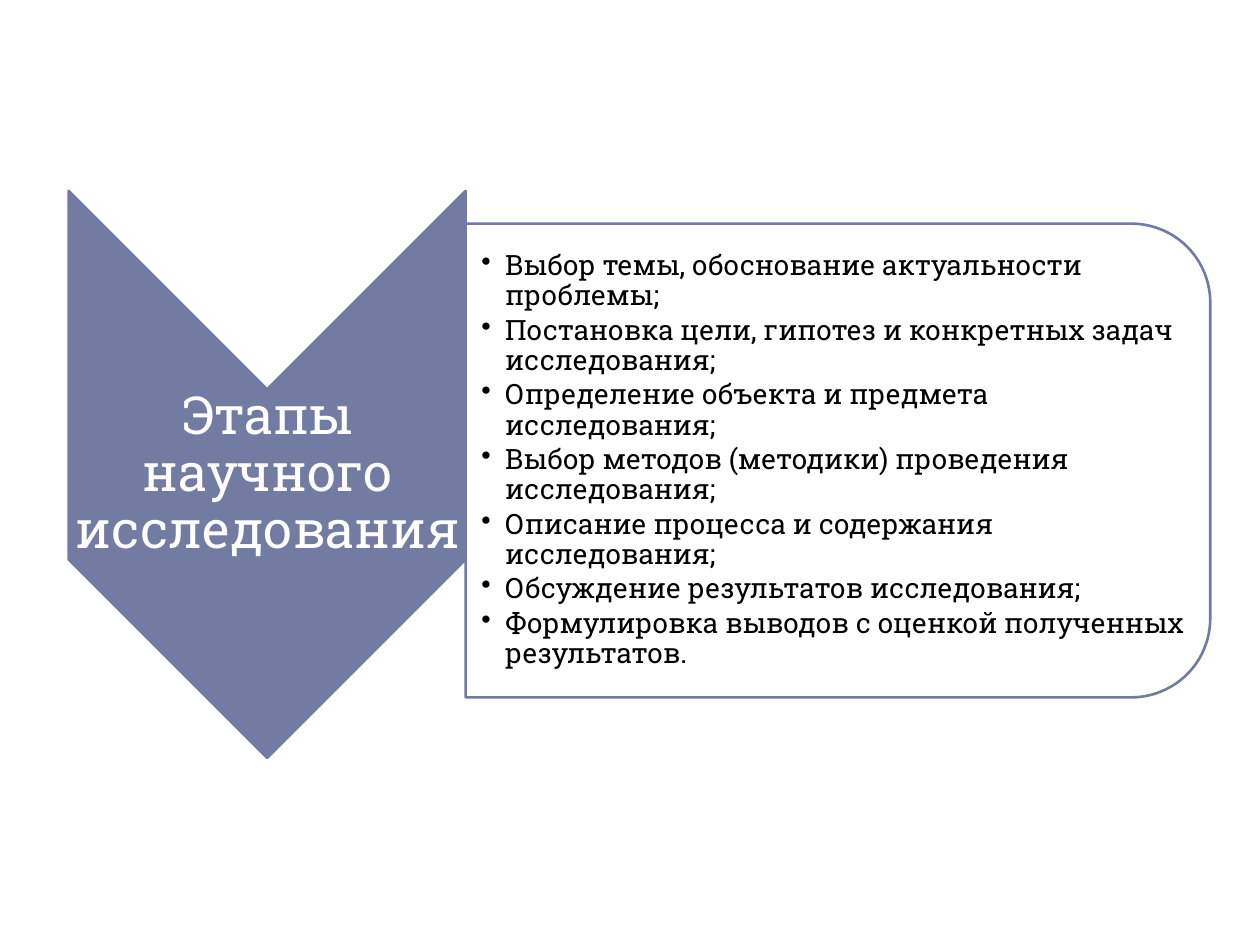
from lxml import etree
from pptx import Presentation
from pptx.dml.color import RGBColor
from pptx.enum.shapes import MSO_SHAPE
from pptx.enum.text import MSO_ANCHOR, PP_ALIGN
from pptx.oxml.ns import qn
from pptx.util import Inches, Pt

CHEVRON = MSO_SHAPE.CHEVRON
ROUND_TOP = MSO_SHAPE.ROUND_2_SAME_RECTANGLE
MIDDLE = MSO_ANCHOR.MIDDLE
LEFT, CENTER = PP_ALIGN.LEFT, PP_ALIGN.CENTER

FONT = "Roboto Slab"
ACCENT, WHITE, BLACK = "727CA3", "FFFFFF", "000000"

TITLE = "Этапы научного исследования"
STAGES = [
    "Выбор темы, обоснование актуальности проблемы;",
    "Постановка цели, гипотез и конкретных задач исследования;",
    "Определение объекта и предмета исследования;",
    "Выбор методов (методики) проведения исследования;",
    "Описание процесса и содержания исследования;",
    "Обсуждение результатов исследования;",
    "Формулировка выводов с оценкой полученных результатов.",
]


def color(hex_string):
    return RGBColor.from_string(hex_string)


class SlideBuilder:
    def __init__(self, slide):
        self.slide = slide

    def turned_shape(self, kind, left, top, width, height, fill, opacity=100):
        """Add an outlined shape turned a quarter clockwise; the box is the unturned one."""
        shape = self.slide.shapes.add_shape(
            kind, Inches(left), Inches(top), Inches(width), Inches(height))
        shape.rotation = 90
        shape.shadow.inherit = False
        shape.fill.solid()
        shape.fill.fore_color.rgb = color(fill)
        shape.line.color.rgb = color(ACCENT)
        shape.line.width = Pt(1.5)
        if opacity < 100:
            fill_color = shape._element.spPr.find(qn("a:solidFill"))[0]
            etree.SubElement(fill_color, qn("a:alpha"), val=str(opacity * 1000))

    def text(self, left, top, width, height, lines, size, text_color,
             align=LEFT, insets=(0.02, 0.02), space_after=0, bulleted=False):
        """Add a centred-in-height text box; insets are the left one and the other three."""
        box = self.slide.shapes.add_textbox(
            Inches(left), Inches(top), Inches(width), Inches(height))
        frame = box.text_frame
        frame.word_wrap = True
        frame.vertical_anchor = MIDDLE
        frame.margin_left = Inches(insets[0])
        frame.margin_top = frame.margin_right = frame.margin_bottom = Inches(insets[1])
        for index, line in enumerate(lines):
            paragraph = frame.add_paragraph() if index else frame.paragraphs[0]
            paragraph.alignment = align
            paragraph.line_spacing = 0.9
            paragraph.space_after = Pt(space_after)
            if bulleted:
                self.bullet(paragraph)
            run = paragraph.add_run()
            run.text = line
            run.font.name = FONT
            run.font.size = Pt(size)
            run.font.color.rgb = color(text_color)

    def bullet(self, paragraph):
        properties = paragraph._p.get_or_add_pPr()
        indent = Inches(0.19)
        properties.set("marL", str(indent))
        properties.set("indent", str(-indent))
        etree.SubElement(properties, qn("a:buChar"), char="•")


def main():
    presentation = Presentation()
    presentation.slide_width = Inches(10)
    presentation.slide_height = Inches(7.5)
    builder = SlideBuilder(presentation.slides.add_slide(presentation.slide_layouts[6]))

    builder.turned_shape(CHEVRON, -0.13, 2.19, 4.5, 3.15, ACCENT)
    builder.text(0.55, 3.09, 3.15, 1.35, [TITLE], 30, WHITE, align=CENTER)
    builder.turned_shape(ROUND_TOP, 4.77, 0.7, 3.76, 5.91, WHITE, opacity=90)
    builder.text(3.7, 1.96, 5.73, 3.39, STAGES, 16, BLACK,
                 insets=(0.12, 0.01), space_after=2.4, bulleted=True)

    presentation.save("out.pptx")


if __name__ == "__main__":
    main()
